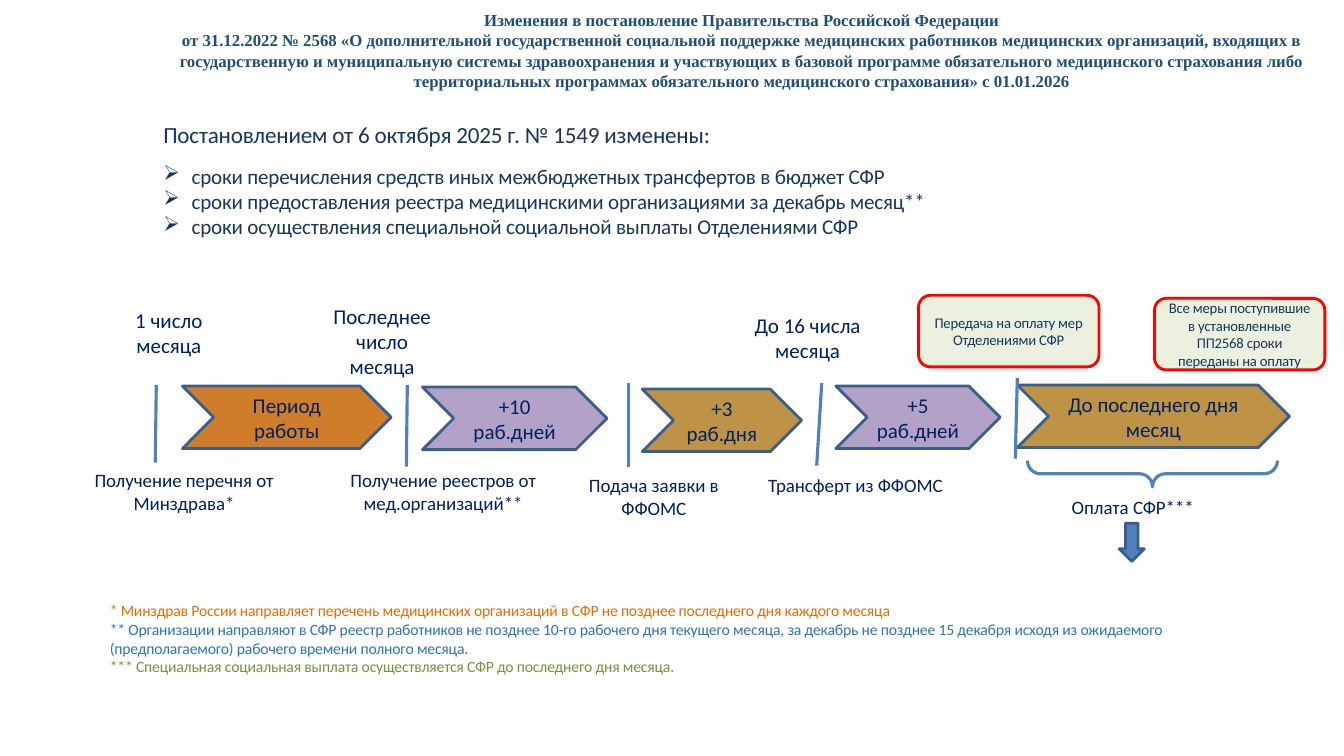
import pptx
import pptx.util
import pptx.dml.color
import pptx.enum.shapes
import pptx.enum.text
import pptx.oxml.ns
import pptx.oxml.xmlchemy
import lxml.etree

Inches = pptx.util.Inches
Pt = pptx.util.Pt
RGBColor = pptx.dml.color.RGBColor
SHAPE = pptx.enum.shapes.MSO_SHAPE
ALIGN = pptx.enum.text.PP_ALIGN
qn = pptx.oxml.ns.qn

TITLE_BLUE = RGBColor(0x1F, 0x4E, 0x79)
TEXT_BLUE = RGBColor(0x17, 0x37, 0x5E)
NAVY = RGBColor(0x00, 0x20, 0x60)
LINE_BLUE = RGBColor(0x4F, 0x81, 0xBD)
EDGE_BLUE = RGBColor(0x3A, 0x5F, 0x8C)
NOTE_BLUE = RGBColor(0x2D, 0x75, 0xB6)
NOTE_ORANGE = RGBColor(0xE3, 0x6C, 0x09)
NOTE_GREEN = RGBColor(0x77, 0x93, 0x3C)
ORANGE = RGBColor(0xCF, 0x7D, 0x2B)
LILAC = RGBColor(0xB3, 0xA2, 0xC7)
OCHRE = RGBColor(0xBE, 0x93, 0x46)
PALE_GREEN = RGBColor(0xEB, 0xF1, 0xDE)
RED = RGBColor(0xFF, 0x00, 0x00)

TITLE = [
    "Изменения в постановление Правительства Российской Федерации",
    "от 31.12.2022 № 2568 «О дополнительной государственной социальной поддержке "
    "медицинских работников медицинских организаций, входящих в государственную и "
    "муниципальную системы здравоохранения и участвующих в базовой программе "
    "обязательного медицинского страхования либо территориальных программах "
    "обязательного медицинского страхования» с 01.01.2026",
]
CHANGES = [
    "сроки перечисления средств иных межбюджетных трансфертов в бюджет СФР",
    "сроки предоставления реестра медицинскими организациями за декабрь месяц**",
    "сроки осуществления специальной социальной выплаты Отделениями СФР",
]
NOTES = [
    ("* Минздрав России направляет перечень медицинских организаций в СФР "
     "не позднее последнего дня каждого месяца", NOTE_ORANGE),
    ("** Организации направляют в СФР реестр работников не позднее 10-го рабочего дня "
     "текущего месяца, за декабрь не позднее 15 декабря исходя из ожидаемого "
     "(предполагаемого) рабочего времени полного месяца.", NOTE_BLUE),
    ("*** Специальная социальная выплата осуществляется СФР "
     "до последнего дня месяца.", NOTE_GREEN),
]
# left, top, width, fill, text
STAGES = [
    (1.81, 3.83, 2.07, ORANGE, "Период работы"),
    (4.19, 3.84, 1.83, LILAC, "+10 раб.дней"),
    (6.37, 3.86, 1.58, OCHRE, "+3 раб.дня"),
    (8.29, 3.83, 1.63, LILAC, "+5 раб.дней"),
    (10.09, 3.82, 2.7, OCHRE, "До последнего дня месяц"),
]
# start x, start y, end x, end y
DIVIDERS = [
    (1.55, 3.82, 1.54, 4.59),
    (4.04, 3.82, 4.03, 4.63),
    (6.23, 3.8, 6.23, 4.63),
    (8.15, 3.8, 8.1, 4.62),
    (10.09, 3.75, 10.07, 4.55),
]
# left, top, width, height, size, paragraphs
LABELS = [
    (1.18, 3.01, 0.99, 0.58, 15, ["1 число", "месяца"]),
    (3.1, 2.97, 1.38, 0.83, 15, ["Последнее число", "месяца"]),
    (7.32, 3.06, 1.38, 0.58, 15, ["До 16 числа месяца"]),
    (0.64, 4.61, 2.37, 0.53, 13.5, ["Получение перечня от Минздрава*"]),
    (3.24, 4.61, 2.31, 0.53, 13.5, ["Получение реестров от мед.организаций**"]),
    (5.55, 4.66, 1.87, 0.53, 13.5, ["Подача заявки в ФФОМС"]),
    (7.42, 4.66, 2.13, 0.3, 13.5, ["Трансферт из ФФОМС"]),
    (9.62, 4.88, 3.23, 0.3, 13.5, ["Оплата СФР***"]),
]
# left, top, width, text
CALLOUTS = [
    (9.11, 2.93, 1.79, "Передача на оплату мер\nОтделениями СФР"),
    (11.45, 2.96, 1.69,
     "Все меры поступившие в установленные ПП2568 сроки переданы на оплату"),
]


def set_frame(frame, side=0.07, edge=0.04):
    frame.word_wrap = True
    frame.margin_left = frame.margin_right = Inches(side)
    frame.margin_top = frame.margin_bottom = Inches(edge)


def add_para(frame, text, size, color, align=ALIGN.LEFT, name="Calibri",
             bold=False, spacing=0, bullet=None):
    para = frame.paragraphs[0]
    if para.runs:
        para = frame.add_paragraph()
    para.text = text
    para.alignment = align
    if bullet:
        properties = para._p.get_or_add_pPr()
        properties.set("marL", str(Inches(0.28)))
        properties.set("indent", str(-Inches(0.28)))
        mark = lxml.etree.SubElement(properties, qn("a:buChar"))
        mark.set("char", bullet)
    font = para.font
    font.name, font.size, font.bold = name, Pt(size), bold
    font.color.rgb = color
    if spacing:
        for span in para.runs:
            span._r.get_or_add_rPr().set("spc", str(spacing))
    return para


def add_text_box(page, left, top, width, height, side=0.07, edge=0.04):
    box = page.shapes.add_textbox(Inches(left), Inches(top), Inches(width), Inches(height))
    set_frame(box.text_frame, side, edge)
    return box.text_frame


def add_figure(page, kind, left, top, width, height, fill, edge, weight=2):
    figure = page.shapes.add_shape(
        kind, Inches(left), Inches(top), Inches(width), Inches(height))
    figure.shadow.inherit = False
    if fill is None:
        figure.fill.background()
    else:
        figure.fill.solid()
        figure.fill.fore_color.rgb = fill
    figure.line.color.rgb = edge
    figure.line.width = Pt(weight)
    set_frame(figure.text_frame)
    figure.text_frame.vertical_anchor = pptx.enum.text.MSO_ANCHOR.MIDDLE
    return figure


def add_divider(page, x1, y1, x2, y2):
    divider = page.shapes.add_connector(
        pptx.enum.shapes.MSO_CONNECTOR.STRAIGHT,
        Inches(x1), Inches(y1), Inches(x2), Inches(y2))
    divider.line.color.rgb = LINE_BLUE
    divider.line.width = Pt(2.25)
    lxml.etree.SubElement(divider._element.spPr, qn("a:effectLst"))


def main():
    deck = pptx.Presentation()
    deck.slide_width, deck.slide_height = Inches(13.33), Inches(7.5)
    page = deck.slides.add_slide(deck.slide_layouts[6])

    # Title
    frame = add_text_box(page, 1.41, 0.05, 11.9, 0.91, 0.1, 0.05)
    for text in TITLE:
        add_para(frame, text, 12, TITLE_BLUE, ALIGN.CENTER, "Times New Roman", bold=True)

    # List of changes
    frame = add_text_box(page, 1.55, 1.15, 9.48, 1.26)
    add_para(frame, "Постановлением от 6 октября 2025 г. № 1549 изменены:",
             16.5, TEXT_BLUE, spacing=-10)
    items = [add_para(frame, text, 15, TEXT_BLUE, spacing=-10, bullet="➢")
             for text in CHANGES]
    items[0].space_before = Pt(11)

    # Callouts above the timeline
    for left, top, width, text in CALLOUTS:
        callout = add_figure(page, SHAPE.ROUNDED_RECTANGLE, left, top, width, 0.71,
                             PALE_GREEN, RED)
        add_para(callout.text_frame, text, 10.5, TEXT_BLUE, ALIGN.CENTER, spacing=-10)

    # Timeline stages, dividers and labels
    for left, top, width, fill, text in STAGES:
        stage = add_figure(page, SHAPE.CHEVRON, left, top, width, 0.62, fill, EDGE_BLUE)
        add_para(stage.text_frame, text, 15, NAVY, ALIGN.CENTER)
    for ends in DIVIDERS:
        add_divider(page, *ends)
    for left, top, width, height, size, lines in LABELS:
        frame = add_text_box(page, left, top, width, height)
        for text in lines:
            add_para(frame, text, size, NAVY, ALIGN.CENTER)

    # Payment brace and arrow
    brace = add_figure(page, SHAPE.RIGHT_BRACE, 11.3, 3.46, 0.26, 2.48,
                       None, LINE_BLUE, 2.25)
    brace.adjustments[0] = 0.5
    brace.rotation = 90
    add_figure(page, SHAPE.DOWN_ARROW, 11.1, 5.19, 0.25, 0.38, LINE_BLUE, EDGE_BLUE)

    # Footnotes
    frame = add_text_box(page, 1.08, 5.95, 11.3, 0.77, 0.01, 0.01)
    for text, color in NOTES:
        add_para(frame, text, 11.2, color, spacing=-10)

    deck.save("out.pptx")


if __name__ == "__main__":
    main()
